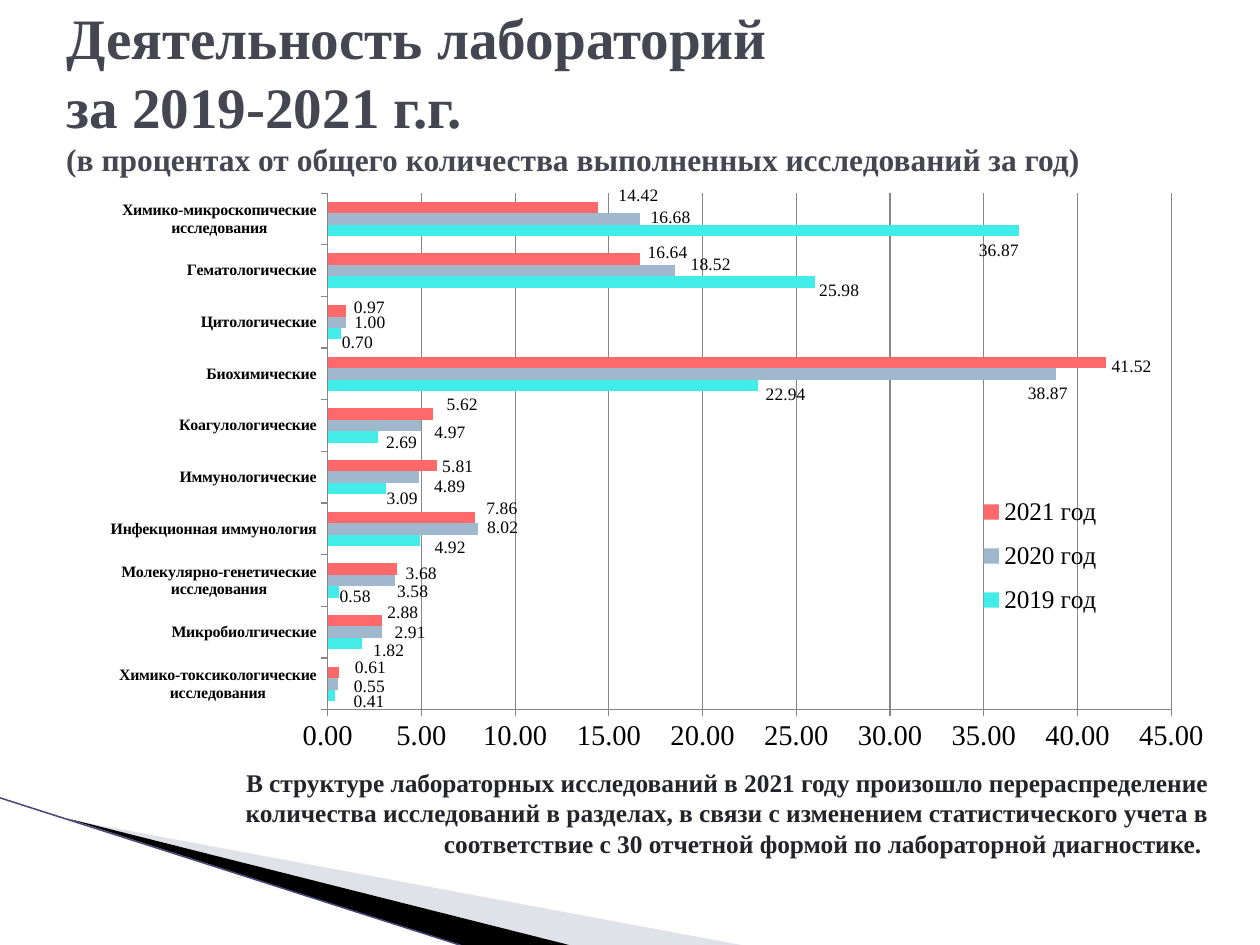
"""Build the slide on laboratory activity in 2019-2021 with its bar chart."""
from lxml.etree import SubElement
from pptx import Presentation
from pptx.chart.data import CategoryChartData
from pptx.dml.color import RGBColor
from pptx.enum.chart import XL_CHART_TYPE, XL_LABEL_POSITION, XL_LEGEND_POSITION, XL_TICK_MARK
from pptx.enum.shapes import MSO_CONNECTOR
from pptx.enum.text import MSO_ANCHOR, PP_ALIGN
from pptx.oxml import parse_xml
from pptx.oxml.ns import nsdecls, qn
from pptx.util import Inches, Pt

THEME = {
    "font": "Times New Roman",
    "title": "464653", "note": "23232A", "text": "000000", "axis": "868686",
    "pale": "B3B7CB", "dark": "000000", "edge": "474A78",
    "title_size": 36, "subtitle_size": 19.8, "note_size": 16, "axis_size": 18,
    "legend_size": 16, "category_size": 10, "label_size": 11,
}
TITLE = [
    ("Деятельность лабораторий", THEME["title_size"]),
    ("за 2019-2021 г.г.", THEME["title_size"]),
    ("(в процентах от общего количества выполненных исследований за год)", THEME["subtitle_size"]),
]
NOTE = [(
    "В структуре лабораторных исследований в 2021 году произошло перераспределение "
    "количества исследований в разделах, в связи с изменением статистического учета "
    "в соответствие с 30 отчетной формой по лабораторной диагностике. ",
    THEME["note_size"],
)]
CATEGORIES = [
    "Химико-токсикологические исследования", "Микробиолгические",
    "Молекулярно-генетические исследования", "Инфекционная иммунология",
    "Иммунологические", "Коагулологические", "Биохимические", "Цитологические",
    "Гематологические", "Химико-микроскопические исследования",
]
SERIES = [
    {"name": "2019 год", "color": "42ECE8",
     "values": [0.41, 1.82, 0.58, 4.92, 3.09, 2.69, 22.94, 0.7, 25.98, 36.87],
     "shifts": [(12, 5), (6, 6), (-3, 4), (9, 6), (-3, 9), (3, 5), (3, 8), (-3, 8), (0, 7), (-39, 18)]},
    {"name": "2020 год", "color": "9FB8CD",
     "values": [0.55, 2.91, 3.58, 8.02, 4.89, 4.97, 38.87, 1, 18.52, 16.68],
     "shifts": [(10, 2), (7, 0), (-2, 10), (4, -1), (9, 8), (8, 6), (-29, 17), (3, 0), (10, -5), (5, -1)]},
    {"name": "2021 год", "color": "FF6969",
     "values": [0.61, 2.88, 3.68, 7.86, 5.81, 5.62, 41.52, 0.97, 16.64, 14.42],
     "shifts": [(10, -4), (1, -7), (4, 4), (6, -8), (1, 1), (8, -8), (1, 4), (3, -3), (3, -6), (14, -10)]},
]
SLIDE_SIZE = (793.75, 595.25)
CHART_BOX = (0.55, 1.38, 9.98, 5.44)
PLOT_BOX = (2.87, 1.69, 7.39, 4.52)
LEGEND_BOX = (8.51, 4.22, 1.2, 1.29)
WEDGES = [
    ([(0.6, 7.17), (6.5, 8.27), (4.99, 8.27)], "pale", 40),
    ([(0.59, 7.16), (4.99, 8.27), (4.03, 8.27)], "dark", 100),
]
EDGE = (0, 6.98, 4.03, 8.27)


def color(name):
    return RGBColor.from_string(THEME.get(name, name))


def style_font(font, size, tone="text", bold=False):
    font.name, font.size, font.bold = THEME["font"], Pt(size), bold
    font.color.rgb = color(tone)


def add_text(page, lines, place, tone, align=PP_ALIGN.LEFT, anchor=MSO_ANCHOR.TOP):
    box = page.shapes.add_textbox(*map(Inches, place))
    frame = box.text_frame
    frame.word_wrap, frame.vertical_anchor = True, anchor
    frame.margin_left = frame.margin_right = Inches(0.11)
    frame.margin_top = frame.margin_bottom = Inches(0.06)
    para = frame.paragraphs[0]
    para.alignment = align
    for index, (text, size) in enumerate(lines):
        if index:
            para.add_line_break()
        span = para.add_run()
        span.text = text
        style_font(span.font, size, tone, bold=True)


def add_wedge(page, points, tone, opacity):
    start, *rest = [tuple(map(Inches, point)) for point in points]
    builder = page.shapes.build_freeform(*start)
    builder.add_line_segments(rest, close=True)
    wedge = builder.convert_to_shape()
    wedge.shadow.inherit = False
    wedge.line.fill.background()
    wedge.fill.solid()
    wedge.fill.fore_color.rgb = color(tone)
    if opacity < 100:
        tint = wedge._element.spPr.find(".//" + qn("a:srgbClr"))
        SubElement(tint, qn("a:alpha")).set("val", str(opacity * 1000))


def add_edge(page):
    edge = page.shapes.add_connector(MSO_CONNECTOR.STRAIGHT, *map(Inches, EDGE))
    edge.line.color.rgb = color("edge")
    edge.line.width = Pt(0.95)
    SubElement(edge._element.spPr, qn("a:effectLst"))


def manual_layout(**values):
    parts = "".join(f'<c:{key} val="{value}"/>' for key, value in values.items())
    return parse_xml(f'<c:layout {nsdecls("c")}><c:manualLayout>{parts}</c:manualLayout></c:layout>')


def area_layout(place, **target):
    left, top, width, height = CHART_BOX
    x, y, w, h = place
    return manual_layout(**target, xMode="edge", yMode="edge", x=(x - left) / width,
                         y=(y - top) / height, w=w / width, h=h / height)


def style_axis(axis, size, bold=False):
    axis.major_tick_mark = XL_TICK_MARK.OUTSIDE
    axis.minor_tick_mark = XL_TICK_MARK.NONE
    axis.format.line.color.rgb = color("axis")
    style_font(axis.tick_labels.font, size, bold=bold)


def style_scale(axis):
    axis.minimum_scale, axis.maximum_scale, axis.major_unit = 0, 45, 5
    axis.has_major_gridlines = True
    axis.major_gridlines.format.line.color.rgb = color("axis")
    axis.tick_labels.number_format = "0.00"
    axis.tick_labels.number_format_is_linked = False


def style_series(series, content):
    series.format.fill.solid()
    series.format.fill.fore_color.rgb = color(content["color"])
    series.invert_if_negative = False
    labels = series.data_labels
    labels.show_value, labels.number_format = True, "0.00"
    labels.number_format_is_linked = False
    style_font(labels.font, THEME["label_size"])
    for index in range(len(CATEGORIES)):
        label = series.points[index].data_label
        style_font(label.font, THEME["label_size"])
        label.position = XL_LABEL_POSITION.OUTSIDE_END
    for leader in series._element.iter(qn("c:showLeaderLines")):
        leader.set("val", "0")
    for element, (x, y) in zip(series._element.iter(qn("c:dLbl")), content["shifts"]):
        layout = manual_layout(x=x / 100 / CHART_BOX[2], y=y / 100 / CHART_BOX[3])
        element.find(qn("c:idx")).addnext(layout)


def add_bar_chart(page):
    data = CategoryChartData(number_format="0.00")
    data.categories = CATEGORIES
    for content in SERIES:
        data.add_series(content["name"], content["values"])
    chart = page.shapes.add_chart(XL_CHART_TYPE.BAR_CLUSTERED, *map(Inches, CHART_BOX), data).chart
    chart.has_title = False
    style_font(chart.font, THEME["axis_size"])
    plot = chart.plots[0]
    plot.gap_width, plot.overlap, plot.vary_by_categories = 150, 0, False
    style_axis(chart.category_axis, THEME["category_size"], bold=True)
    style_axis(chart.value_axis, THEME["axis_size"])
    style_scale(chart.value_axis)
    for series, content in zip(plot.series, SERIES):
        style_series(series, content)
    chart.has_legend = True
    legend = chart.legend
    legend.position, legend.include_in_layout = XL_LEGEND_POSITION.RIGHT, False
    style_font(legend.font, THEME["legend_size"])
    legend._element.find(qn("c:legendPos")).addnext(area_layout(LEGEND_BOX))
    area = plot._element.getparent()
    for old in area.findall(qn("c:layout")):
        area.remove(old)
    area.insert(0, area_layout(PLOT_BOX, layoutTarget="inner"))


def main():
    deck = Presentation()
    deck.slide_width, deck.slide_height = map(Pt, SLIDE_SIZE)
    page = deck.slides.add_slide(deck.slide_layouts[6])
    for wedge in WEDGES:
        add_wedge(page, *wedge)
    add_edge(page)
    add_bar_chart(page)
    add_text(page, NOTE, (1.5, 6.65, 9.18, 0.92), "note", align=PP_ALIGN.RIGHT)
    add_text(page, TITLE, (0.47, 0.12, 10.4, 1.34), "title", anchor=MSO_ANCHOR.MIDDLE)
    deck.save("out.pptx")


if __name__ == "__main__":
    main()
